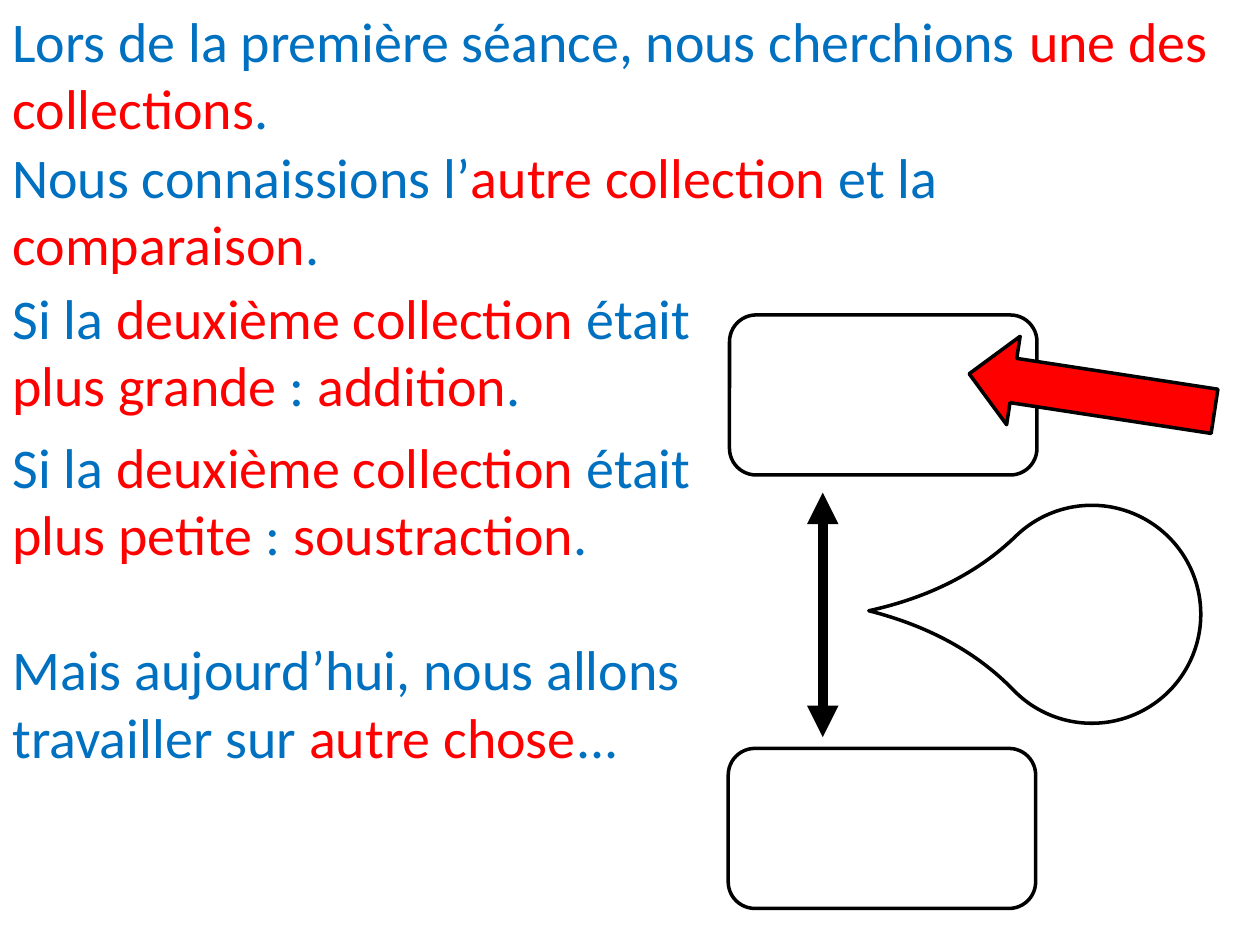
from pptx import Presentation
from pptx.dml.color import RGBColor
from pptx.enum.shapes import MSO_CONNECTOR, MSO_SHAPE
from pptx.oxml.ns import qn
from pptx.util import Inches, Pt
from lxml.etree import SubElement

COLORS = {"blue": "0070C0", "red": "FF0000", "black": "000000"}
FONT, SIZE = "Calibri", 32

# Text boxes: top, width, height, then pieces that alternate blue and red
TEXTS = [
    (0, 10, 1.18, ["Lors de la première séance, nous cherchions ",
                   "une des collections", "."]),
    (1.08, 10, 1.18, ["Nous connaissions l’", "autre collection ", "et la ",
                      "comparaison", "."]),
    (2.2, 5.63, 1.18, ["Si la ", "deuxième collection ", "était ",
                       "plus grande ", ": ", "addition", "."]),
    (3.38, 5.63, 1.72, ["Si la ", "deuxième collection ", "était ",
                        "plus petite ", ": ", "soustraction", "."]),
    (4.99, 5.63, 1.72, ["Mais aujourd’hui, nous allons travailler sur ",
                        "autre chose", "..."]),
]

# Shapes: preset, box, rotation, fill, adjustment
BOX, ARROW, DROP = (MSO_SHAPE.ROUNDED_RECTANGLE, MSO_SHAPE.RIGHT_ARROW,
                    MSO_SHAPE.TEAR)
SHAPES = [
    (BOX, (5.79, 2.5, 2.44, 1.27), 0, None, None),
    (BOX, (5.78, 5.94, 2.44, 1.27), 0, None, None),
    (ARROW, (7.68, 2.76, 1.97, 0.71), 188.7, "red", None),
    (DROP, (7.8, 4.01, 1.73, 1.73), 225.9, None, 1.447),
]
GAP = (6.53, 3.91, 6.53, 5.85)


def color(name):
    return RGBColor.from_string(COLORS[name])


def outline(line, width):
    line.color.rgb = color("black")
    line.width = Pt(width)


def add_text(slide, top, width, height, parts):
    box = slide.shapes.add_textbox(0, Inches(top), Inches(width), Inches(height))
    box.text_frame.word_wrap = True
    para = box.text_frame.paragraphs[0]
    para.font.name, para.font.size = FONT, Pt(SIZE)
    for i, part in enumerate(parts):
        run = para.add_run()
        run.text = part
        run.font.color.rgb = color("red" if i % 2 else "blue")


def add_shape(slide, kind, box, turn, fill, adjust):
    shape = slide.shapes.add_shape(kind, *map(Inches, box))
    shape.shadow.inherit = False
    shape.rotation = turn
    if adjust is not None:
        shape.adjustments[0] = adjust
    if fill:
        shape.fill.solid()
        shape.fill.fore_color.rgb = color(fill)
    else:
        shape.fill.background()
    outline(shape.line, 2)


def add_gap(slide, ends):
    link = slide.shapes.add_connector(MSO_CONNECTOR.STRAIGHT, *map(Inches, ends))
    outline(link.line, 6)
    props = link._element.spPr
    for end in ("a:headEnd", "a:tailEnd"):
        SubElement(props.find(qn("a:ln")), qn(end), type="triangle")
    SubElement(props, qn("a:effectLst"))


def main():
    deck = Presentation()
    deck.slide_width, deck.slide_height = Inches(10), Inches(7.5)
    slide = deck.slides.add_slide(deck.slide_layouts[6])

    # Comparison diagram
    add_gap(slide, GAP)
    for item in SHAPES:
        add_shape(slide, *item)

    # Sentences
    for item in TEXTS:
        add_text(slide, *item)

    deck.save("out.pptx")


if __name__ == "__main__":
    main()
